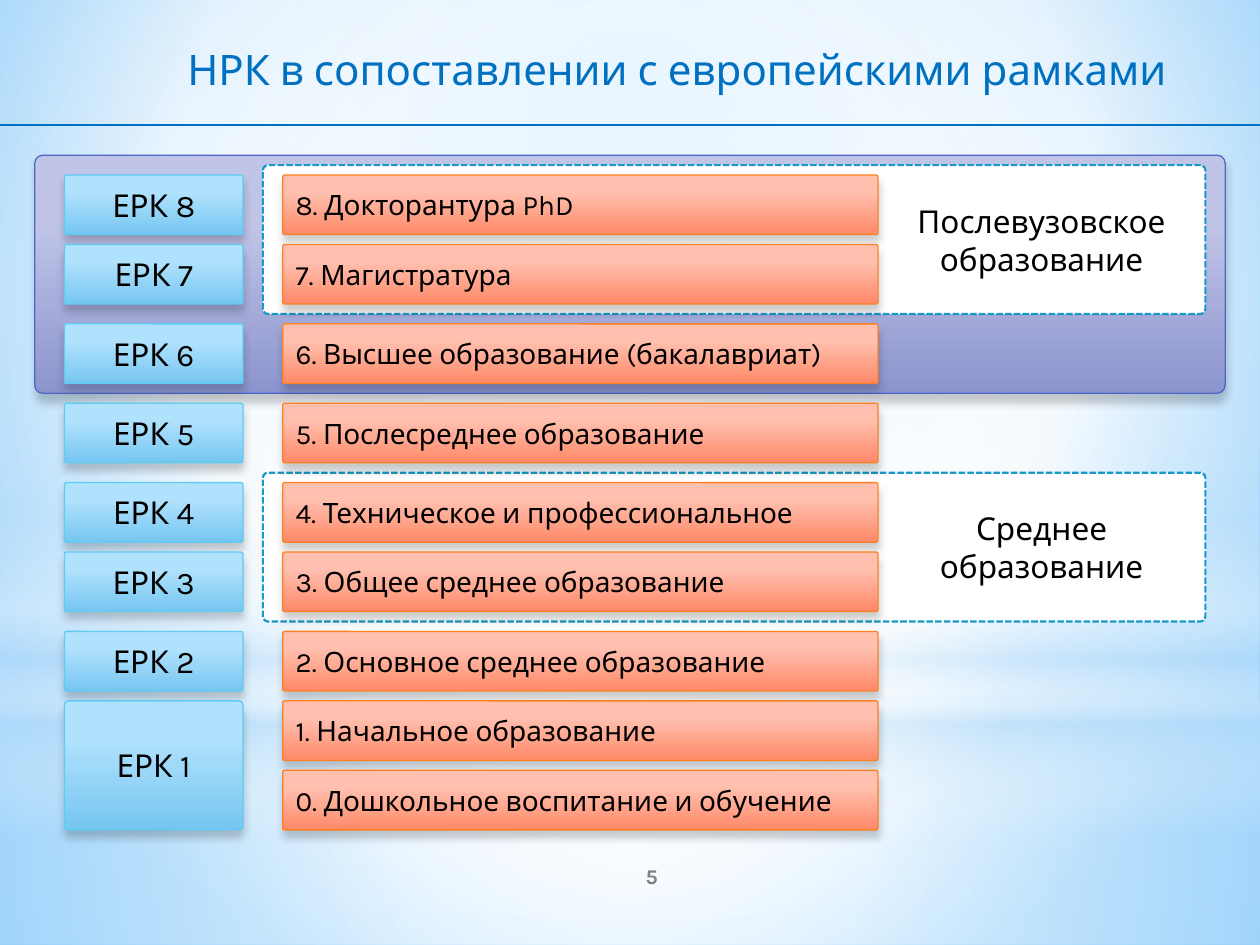
from lxml import etree
from pptx import Presentation
from pptx import util as u
from pptx.dml.color import RGBColor
from pptx.enum import dml, shapes, text
from pptx.oxml.ns import qn

FONT = "Karla"
BLACK = RGBColor(0x00, 0x00, 0x00)
WHITE = RGBColor(0xFF, 0xFF, 0xFF)
GRAY = RGBColor(0x80, 0x80, 0x80)
BLUE = RGBColor(0x00, 0x70, 0xC0)
TEAL = RGBColor(0x19, 0x99, 0xC6)
PALE = RGBColor(0xB4, 0xDC, 0xFA)
SKY = RGBColor(0x9E, 0xD5, 0xFF)
DEEP_SKY = RGBColor(0x5B, 0xB9, 0xFF)

# Card styles: upper colour, lower colour, outline
VIOLET_STYLE = (RGBColor(0xC0, 0xC5, 0xE8), RGBColor(0x8C, 0x94, 0xCE),
                RGBColor(0x4E, 0x67, 0xC8))
BLUE_STYLE = (RGBColor(0xB1, 0xE2, 0xFD), RGBColor(0x76, 0xC6, 0xF1),
              RGBColor(0x5E, 0xCC, 0xF3))
CORAL_STYLE = (RGBColor(0xFF, 0xC0, 0xAF), RGBColor(0xFF, 0x89, 0x68),
               RGBColor(0xFF, 0x80, 0x21))

ROUND = shapes.MSO_SHAPE.ROUNDED_RECTANGLE
RECT = shapes.MSO_SHAPE.RECTANGLE
OVAL = shapes.MSO_SHAPE.OVAL
CENTER = (50, 50, 50, 50)

# Background layers: shape, top, height, stops (position, colour, opacity), focus
LAYERS = [
    (RECT, 14.17, 4.88, [(0, WHITE, 91), (37, WHITE, 76), (100, PALE, 79)], CENTER),
    (RECT, 0, 14.17, [(0, WHITE, 89), (48, WHITE, 62), (100, PALE, 79)], CENTER),
    (RECT, 10.46, 6.35, [(0, WHITE, 0), (29, WHITE, 30), (45, PALE, 40),
                         (55, WHITE, 26), (65, PALE, 60), (100, WHITE, 0)], None),
    (OVAL, 4.45, 14.17, [(0, WHITE, 100), (56, WHITE, 0)], CENTER),
]

# Levels from the top down, each with the gap below its row
LEVELS = [
    ("8. Докторантура PhD", 0.2),
    ("7. Магистратура", 0.4),
    ("6. Высшее образование (бакалавриат)", 0.4),
    ("5. Послесреднее образование", 0.4),
    ("4. Техническое и профессиональное", 0.2),
    ("3. Общее среднее образование", 0.4),
    ("2. Основное среднее образование", 0.2),
    ("1. Начальное образование", 0.2),
    ("0. Дошкольное воспитание и обучение", 0),
]
FIRST_TOP, ROW_HEIGHT = 3.53, 1.2
GROUPS = [(3.33, "Послевузовское\nобразование"), (9.53, "Среднее\nобразование")]


def gradient_fill(fill, parent, stops, focus=None):
    """Fill with a gradient: vertical, or circular around a focus rectangle."""
    fill.background()
    grad = etree.Element(qn("a:gradFill"))
    stop_list = etree.SubElement(grad, qn("a:gsLst"))
    for position, color, opacity in stops:
        stop = etree.SubElement(stop_list, qn("a:gs"), pos=str(position * 1000))
        tint = etree.SubElement(stop, qn("a:srgbClr"), val=str(color))
        if opacity < 100:
            etree.SubElement(tint, qn("a:alpha"), val=str(opacity * 1000))
    if focus:
        circle = etree.SubElement(grad, qn("a:path"), path="circle")
        sides = {side: str(value * 1000) for side, value in zip("ltrb", focus)}
        etree.SubElement(circle, qn("a:fillToRect"), **sides)
    else:
        etree.SubElement(grad, qn("a:lin"), ang="5400000", scaled="0")
    parent.replace(parent.find(qn("a:noFill")), grad)


def add_block(page, kind, left, top, width, height):
    block = page.shapes.add_shape(kind, u.Cm(left), u.Cm(top), u.Cm(width), u.Cm(height))
    block.shadow.inherit = False
    if kind == ROUND:
        block.adjustments[0] = 0.034
    return block


def set_text(box, wording, size, color, align=text.PP_ALIGN.CENTER, bold=False):
    frame = box.text_frame
    frame.text = wording
    frame.word_wrap = True
    frame.vertical_anchor = text.MSO_ANCHOR.MIDDLE
    for para in frame.paragraphs:
        para.alignment = align
        for span in para.runs:
            span.font.name = FONT
            span.font.size = u.Pt(size)
            span.font.bold = bold
            span.font.color.rgb = color


def add_label(page, left, top, width, height, *args, **kwargs):
    box = page.shapes.add_textbox(u.Cm(left), u.Cm(top), u.Cm(width), u.Cm(height))
    set_text(box, *args, **kwargs)


def add_card(page, left, top, width, height, style):
    """Rounded card with a gradient, thin outline and soft drop shadow."""
    upper, lower, outline = style
    card = add_block(page, ROUND, left, top, width, height)
    properties = card._element.spPr
    gradient_fill(card.fill, properties, [(28, upper, 100), (100, lower, 100)])
    card.line.color.rgb = outline
    card.line.width = u.Pt(0.75)
    shadow = etree.SubElement(properties.find(qn("a:effectLst")), qn("a:outerShdw"),
                              blurRad=str(u.Pt(5)), dist=str(u.Pt(4)),
                              dir="5400000", rotWithShape="0")
    tint = etree.SubElement(shadow, qn("a:srgbClr"), val=str(BLACK))
    etree.SubElement(tint, qn("a:alpha"), val="20000")
    return card


def add_group_frame(page, top):
    frame = add_block(page, ROUND, 5.3, top, 19, 3)
    frame.fill.solid()
    frame.fill.fore_color.rgb = WHITE
    frame.line.color.rgb = TEAL
    frame.line.width = u.Pt(1.25)
    frame.line.dash_style = dml.MSO_LINE.SQUARE_DOT


def add_background(page):
    background = page.background.fill
    background.background()
    gradient_fill(background, page._element.find(".//" + qn("p:bgPr")),
                  [(0, SKY, 100), (60, WHITE, 100), (100, DEEP_SKY, 100)],
                  (20, 10, 20, 60))
    for kind, top, height, stops, focus in LAYERS:
        layer = add_block(page, kind, 0, top, 25.4, height)
        gradient_fill(layer.fill, layer._element.spPr, stops, focus)
        layer.line.fill.background()


def add_heading(page):
    title = page.shapes.title
    title.left, title.top = u.Cm(2.1), u.Cm(0.74)
    title.width, title.height = u.Cm(23.1), u.Cm(1.28)
    set_text(title, "НРК в сопоставлении с европейскими рамками", 24, BLUE)
    # Bring the title in front of the background layers
    page.shapes._spTree.append(title._element)

    rule = page.shapes.add_connector(shapes.MSO_CONNECTOR.STRAIGHT,
                                     0, u.Cm(2.52), u.Cm(25.4), u.Cm(2.52))
    rule.line.color.rgb = BLUE
    rule.line.width = u.Pt(1)
    etree.SubElement(rule._element.spPr, qn("a:effectLst"))


def add_levels(page):
    top = FIRST_TOP
    for number, (wording, gap) in zip(range(8, -1, -1), LEVELS):
        if number > 0:
            # The lowest European level spans the last two rows
            height = ROW_HEIGHT if number > 1 else 2 * ROW_HEIGHT + gap
            card = add_card(page, 1.3, top, 3.6, height, BLUE_STYLE)
            set_text(card, f"ЕРК {number}", 18, BLACK)
        card = add_card(page, 5.7, top, 12, ROW_HEIGHT, CORAL_STYLE)
        set_text(card, wording, 16, BLACK, text.PP_ALIGN.LEFT)
        top += ROW_HEIGHT + gap


def main():
    deck = Presentation()
    deck.slide_width, deck.slide_height = u.Cm(25.4), u.Cm(19.05)
    page = deck.slides.add_slide(deck.slide_layouts[5])
    add_background(page)
    add_heading(page)

    # Higher education panel, then the two framed groups
    add_card(page, 0.7, 3.13, 24, 4.8, VIOLET_STYLE)
    for top, wording in GROUPS:
        add_group_frame(page, top)
        add_label(page, 18.1, top + 0.6, 5.8, 1.8, wording, 18, BLACK)
    add_levels(page)

    # Page number
    add_label(page, 10.6, 17.15, 5.08, 1.02, "5", 12, GRAY, bold=True)
    deck.save("out.pptx")


if __name__ == "__main__":
    main()
